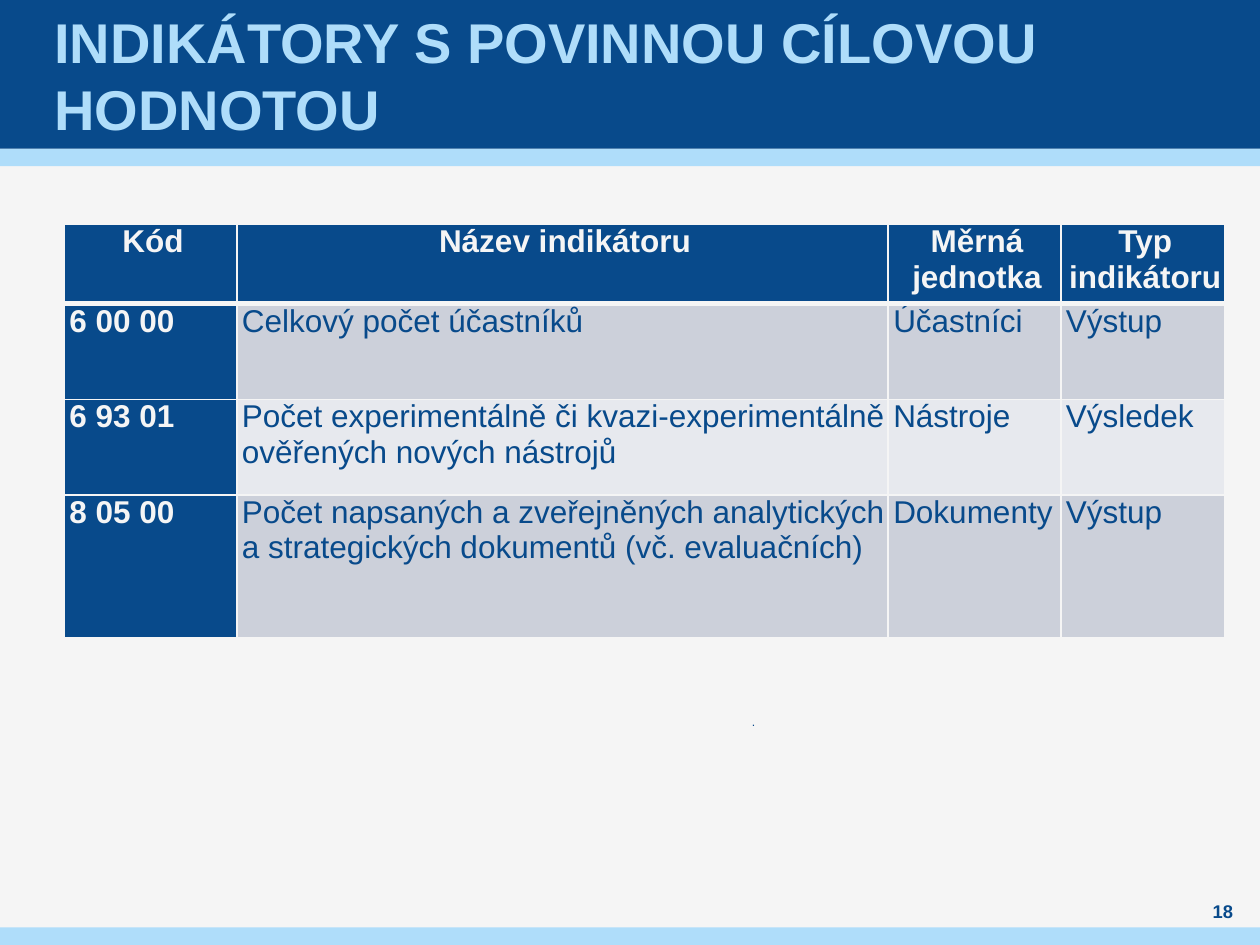
from lxml import etree
from pptx import Presentation
from pptx import util as u
from pptx.dml.color import RGBColor
from pptx.enum import shapes, text
from pptx.oxml.ns import qn

W, H = 10, 7.5
NAVY, SKY, PAPER = "084A8B", "AFDDFA", "F5F5F5"
STRIPES = "CCD0DA", "E7E9EE"
TOP_H, STRIPE_H = 1.18, 0.14
COLS = 1.37, 5.17, 1.37, 1.3
ROWS = 0.63, 0.76, 0.76, 1.13
INDICATORS = [
    ("Kód", "Název indikátoru", "Měrná jednotka", "Typ indikátoru"),
    ("6 00 00", "Celkový počet účastníků", "Účastníci", "Výstup"),
    ("6 93 01", "Počet experimentálně či kvazi-experimentálně ověřených nových nástrojů",
     "Nástroje", "Výsledek"),
    ("8 05 00", "Počet napsaných a zveřejněných analytických a strategických dokumentů "
     "(vč. evaluačních)", "Dokumenty", "Výstup"),
]


def rgb(color):
    return RGBColor.from_string(color)


def paint(fill, color):
    fill.solid()
    fill.fore_color.rgb = rgb(color)


def style(p, size, color, bold=False, align=text.PP_ALIGN.LEFT):
    p.alignment = align
    p.font.name, p.font.size, p.font.bold = "Arial", u.Pt(size), bold
    p.font.color.rgb = rgb(color)


def set_margins(tf, x, y=0):
    tf.margin_left = tf.margin_right = u.Inches(x)
    tf.margin_top = tf.margin_bottom = u.Inches(y)


def add_band(s, top, height, color):
    """Full-width bar across the slide."""
    sp = s.shapes.add_shape(shapes.MSO_SHAPE.RECTANGLE, 0, u.Inches(top),
                            u.Inches(W), u.Inches(height))
    sp.shadow.inherit = False
    paint(sp.fill, color)
    sp.line.fill.background()


def place_title(s, box, words):
    sp = s.shapes.title
    sp.left, sp.top, sp.width, sp.height = map(u.Inches, box)
    sp.element.getparent().append(sp.element)  # in front of the bands
    tf = sp.text_frame
    tf.text = words
    tf.auto_size = text.MSO_AUTO_SIZE.NONE
    tf.vertical_anchor = text.MSO_ANCHOR.MIDDLE
    set_margins(tf, 0.04)
    style(tf.paragraphs[0], 32, SKY, True)


def add_label(s, box, words, size, bold, align, margins=(0, 0), wrap=True):
    tf = s.shapes.add_textbox(*map(u.Inches, box)).text_frame
    tf.text, tf.word_wrap = words, wrap
    tf.vertical_anchor = text.MSO_ANCHOR.MIDDLE
    set_margins(tf, *margins)
    style(tf.paragraphs[0], size, NAVY, bold, align)


def border_cell(cell, widths):
    """Draw cell borders; widths maps side letters to points."""
    tc_pr = cell._tc.get_or_add_tcPr()
    for i, (side, width) in enumerate(widths.items()):
        ln = etree.Element(qn(f"a:ln{side}"), w=str(u.Pt(width)))
        fill = etree.SubElement(ln, qn("a:solidFill"))
        etree.SubElement(fill, qn("a:srgbClr"), val=PAPER)
        tc_pr.insert(i, ln)


def fill_cell(cell, words, row, col):
    header, dark = row == 0, row == 0 or col == 0
    cell.text = words
    set_margins(cell, 0)
    paint(cell.fill, NAVY if dark else STRIPES[(row - 1) % 2])
    p = cell.text_frame.paragraphs[0]
    align = text.PP_ALIGN.CENTER if header else text.PP_ALIGN.LEFT
    style(p, 18, PAPER if dark else NAVY, dark, align)
    p.space_before = u.Pt(3)
    p._p.get_or_add_pPr().set("marL", str(u.Inches(0.04)))
    border_cell(cell, {"L": 1, "R": 1, "T": 3 if row == 1 else 1, "B": 3 if header else 1})


def add_indicator_table(s, left, top):
    table = s.shapes.add_table(len(ROWS), len(COLS), u.Inches(left), u.Inches(top),
                               u.Inches(sum(COLS)), u.Inches(sum(ROWS))).table
    for column, width in zip(table.columns, COLS):
        column.width = u.Inches(width)
    for r, height in enumerate(ROWS):
        table.rows[r].height = u.Inches(height)
        for c, words in enumerate(INDICATORS[r]):
            fill_cell(table.cell(r, c), words, r, c)


def main():
    prs = Presentation()
    prs.slide_width, prs.slide_height = u.Inches(W), u.Inches(H)
    s = prs.slides.add_slide(prs.slide_layouts[5])
    paint(s.background.fill, PAPER)
    add_band(s, TOP_H, STRIPE_H, SKY)
    add_band(s, 0, TOP_H, NAVY)
    add_band(s, H - STRIPE_H, STRIPE_H, SKY)
    place_title(s, (0.39, 0, 9.21, TOP_H), "INDIKÁTORY S POVINNOU CÍLOVOU HODNOTOU")
    add_label(s, (9.45, 7.13, 0.51, 0.2), "18", 10.5, True, text.PP_ALIGN.CENTER)
    add_indicator_table(s, 0.51, 1.78)
    add_label(s, (5.87, 5.62, 0.23, 0.22), ".", 7, False, text.PP_ALIGN.JUSTIFY,
              (0.1, 0.05), wrap=False)
    prs.save("out.pptx")


if __name__ == "__main__":
    main()
